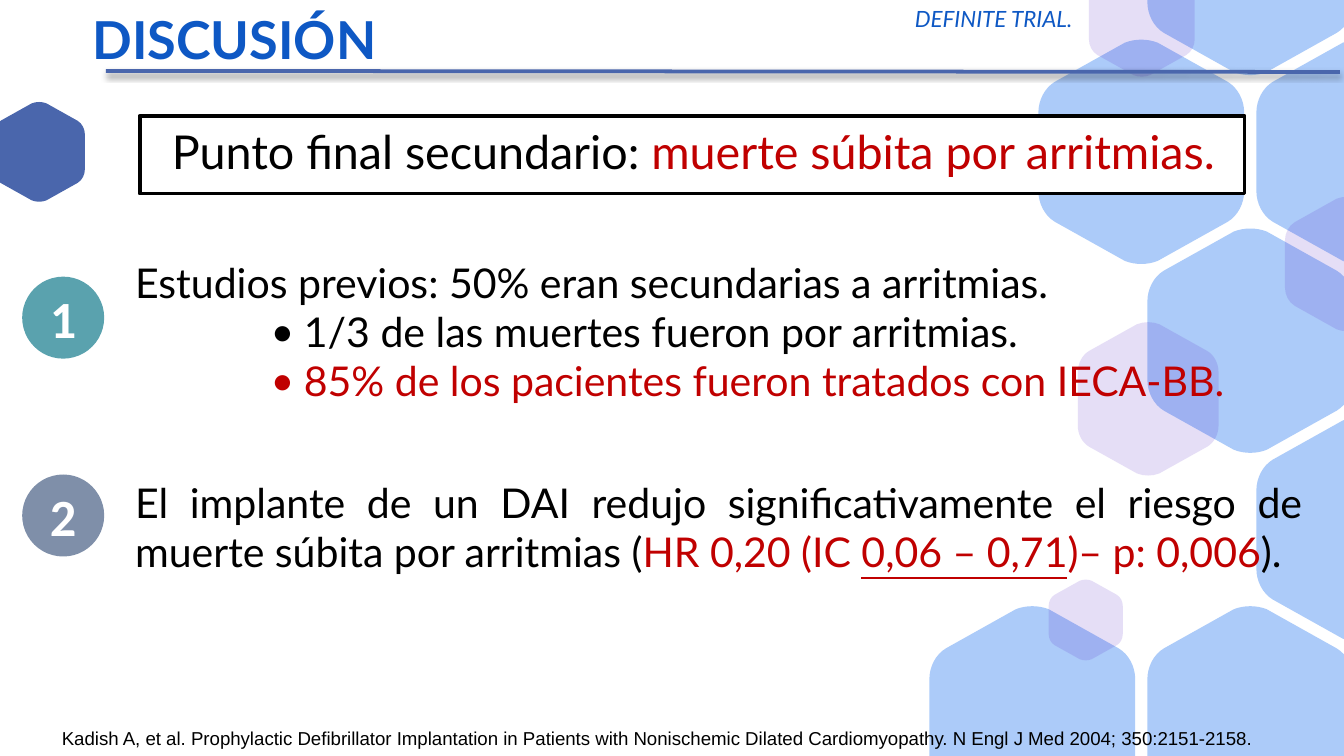
from lxml import etree
from pptx import Presentation
from pptx.dml.color import RGBColor
from pptx.enum.shapes import MSO_CONNECTOR, MSO_SHAPE
from pptx.enum.text import MSO_ANCHOR, MSO_AUTO_SIZE, PP_ALIGN
from pptx.oxml import parse_xml
from pptx.oxml.ns import nsdecls, qn
from pptx.util import Cm, Pt

COLORS = {
    "black": "000000", "white": "FFFFFF", "red": "C00000", "title": "0E58C4",
    "navy": "4A66AC", "sky": "ACCBF9", "violet": "5322C9",
    "teal": "5AA2AE", "slate": "7F8FA9",
}
FORMATS = {
    "trial": {"name": "Lato", "size": Pt(12), "italic": True},
    "heading": {"name": "Lato", "size": Pt(28), "bold": True},
    "endpoint": {"name": "Lato", "size": Pt(25)},
    "point": {"name": "Lato", "size": Pt(22)},
    "number": {"name": "Calibri", "size": Pt(28), "bold": True},
    "source": {"name": "Arial", "size": Pt(10)},
}

# Each paragraph is a list of (text, colour, extra format) runs.
TRIAL = [("DEFINITE TRIAL.", "title", {})]
HEADING = [("DISCUSIÓN", "title", {})]
ENDPOINT = [("Punto final secundario: ", "black", {}),
            ("muerte súbita por arritmias.", "red", {})]
SOURCE = [("Kadish A, et al. Prophylactic Defibrillator Implantation in Patients "
           "with Nonischemic Dilated Cardiomyopathy. N Engl J Med 2004; "
           "350:2151-2158.", "black", {})]
# number, circle colour, circle top, text top, [(is bullet, runs)]
POINTS = [
    ("1", "teal", 5.23, 4.73, [
        (False, [("Estudios previos: 50% eran secundarias a arritmias.", "black", {})]),
        (True, [("1/3 de las muertes fueron por arritmias.", "black", {})]),
        (True, [("85% de los pacientes fueron tratados con IECA-BB.", "red", {})]),
    ]),
    ("2", "slate", 8.97, 8.89, [
        (False, [("El implante de un DAI redujo significativamente el riesgo de "
                  "muerte súbita por arritmias (", "black", {}),
                 ("HR 0,20 (IC ", "red", {}),
                 ("0,06 – 0,71", "red", {"underline": True}),
                 (")– p: 0,006", "red", {}),
                 (").", "black", {})]),
    ]),
]

SLIDE_W, SLIDE_H = 25.4, 14.29
HONEYCOMB = [(0, 3), (2, 3), (3, 0), (2, -1), (2, 1), (1, 0), (3, 2)]  # column, row
COMB_X, COMB_Y, COL_STEP, ROW_STEP, COMB_W = 19.51, 2.87, 2.06, 3.57, 3.89
ACCENTS = [(25.45, 4.99, 2.33), (20.52, 11.72, 1.4),  # centre x, centre y, width
           (21.58, 0.36, 2), (21.7, 7.54, 2.66)]
SIDE_HEXAGON = (0.74, 2.87, 1.73)
# Bézier points of the rounded corners, for a hexagon of width 1
SIDE_CURVE = [(0.5, -0.19), (0.5, -0.25), (0.47, -0.31), (0.42, -0.34)]
TOP_CURVE = [(0.08, -0.53), (0.03, -0.55), (-0.03, -0.55), (-0.08, -0.53)]
HALF_HEXAGON = SIDE_CURVE + TOP_CURVE + [(-x, y) for x, y in reversed(SIDE_CURVE)]


def rgb(color):
    return RGBColor.from_string(COLORS[color])


def paint(sp, fill, line=None):
    sp.shadow.inherit = False
    sp.fill.solid()
    sp.fill.fore_color.rgb = rgb(fill)
    if line:
        sp.line.color.rgb = rgb(line)
        sp.line.width = Pt(2)
    else:
        sp.line.fill.background()


def hexagon_points(cx, cy, w):
    """Corner curves in order; a half beyond the slide becomes a flat edge."""
    def scale(pts, sign):
        return [(cx + sign * x * w, cy + sign * y * w) for x, y in pts]

    reach = 0.55 * w
    if cy + reach > SLIDE_H:
        return scale(HALF_HEXAGON, 1) + [(cx - w / 2, SLIDE_H), (cx + w / 2, SLIDE_H)]
    if cy - reach < 0:
        pts = scale(HALF_HEXAGON, -1)
        return [(x, max(y, 0)) for x, y in pts] + [(cx + w / 2, 0), (cx - w / 2, 0)]
    return scale(HALF_HEXAGON, 1) + scale(HALF_HEXAGON, -1)


def round_corners(sp):
    """Turn each corner's three line segments into one Bézier curve."""
    lines = list(sp._element.iter(qn("a:lnTo")))
    for k in range(0, len(lines) - 2, 4):
        curve = etree.Element(qn("a:cubicBezTo"))
        lines[k].addprevious(curve)
        for line in lines[k:k + 3]:
            curve.append(line[0])
            line.getparent().remove(line)


def add_hexagon(s, cx, cy, w, color, alpha=None):
    pts = [(Cm(x), Cm(y)) for x, y in hexagon_points(cx, cy, w)]
    builder = s.shapes.build_freeform(*pts[0], scale=1.0)
    builder.add_line_segments(pts[1:], close=True)
    sp = builder.convert_to_shape()
    round_corners(sp)
    paint(sp, color)
    if alpha:
        clr = sp._element.spPr.find(".//" + qn("a:srgbClr"))
        etree.SubElement(clr, qn("a:alpha"), val=str(alpha * 1000))
    return sp


def add_backdrop(s):
    """Draw the hexagons and hand them to the slide layout."""
    hexagons = [add_hexagon(s, *SIDE_HEXAGON, "navy")]
    for col, row in HONEYCOMB:
        hexagons.append(add_hexagon(s, COMB_X + col * COL_STEP, COMB_Y + row * ROW_STEP,
                                    COMB_W, "sky"))
    for accent in ACCENTS:
        hexagons.append(add_hexagon(s, *accent, "violet", alpha=15))
    for i, sp in enumerate(hexagons):
        sp._element.nvSpPr.cNvPr.set("id", str(100 + i))
        s.slide_layout.shapes._spTree.append(sp._element)


def place(sp, left, top, width, height):
    box = {"left": left, "top": top, "width": width, "height": height}
    for name, value in box.items():
        setattr(sp, name, Cm(value))


def write(p, runs, style, align=PP_ALIGN.LEFT):
    p.alignment = align
    for text, color, extra in runs:
        r = p.add_run()
        r.text = text
        for name, value in {**FORMATS[style], **extra}.items():
            setattr(r.font, name, value)
        r.font.color.rgb = rgb(color)


def indent(p, margin, bullet=False):
    pPr = p._p.get_or_add_pPr()
    pPr.set("marL", str(Cm(margin)))
    pPr.set("indent", str(Cm(-0.63) if bullet else 0))
    if bullet:
        etree.SubElement(pPr, qn("a:buFont"), typeface="Lato")
        etree.SubElement(pPr, qn("a:buChar"), char="•")
    else:
        etree.SubElement(pPr, qn("a:buNone"))


def add_text(s, box, runs, style, align=PP_ALIGN.LEFT):
    sp = s.shapes.add_textbox(*map(Cm, box))
    sp.text_frame.word_wrap = True
    write(sp.text_frame.paragraphs[0], runs, style, align)


def add_rule(s):
    line = s.shapes.add_connector(MSO_CONNECTOR.STRAIGHT,
                                  Cm(25.32), Cm(1.36), Cm(2), Cm(1.34))
    line.line.color.rgb = rgb("navy")
    line.line.width = Pt(2)
    line._element.spPr.append(parse_xml(
        f'<a:effectLst {nsdecls("a")}><a:outerShdw blurRad="40000" dist="20000" '
        f'dir="5400000" rotWithShape="0"><a:srgbClr val="{COLORS["black"]}">'
        '<a:alpha val="38000"/></a:srgbClr></a:outerShdw></a:effectLst>'))


def add_point(s, body, number, color, circle_top, text_top, paragraphs):
    sp = s.shapes.add_shape(MSO_SHAPE.OVAL, Cm(0.42), Cm(circle_top), Cm(1.55), Cm(1.55))
    paint(sp, color)
    sp.text_frame.vertical_anchor = MSO_ANCHOR.MIDDLE
    write(sp.text_frame.paragraphs[0], [(number, "white", {})], "number", PP_ALIGN.CENTER)

    place(body, 1.95, text_top, 22.92, 1.47)
    tf = body.text_frame
    tf.auto_size = MSO_AUTO_SIZE.NONE
    tf.vertical_anchor = MSO_ANCHOR.TOP
    for i, (bullet, runs) in enumerate(paragraphs):
        p = tf.add_paragraph() if i else tf.paragraphs[0]
        p.space_before = Pt(0)
        indent(p, 3.54 if bullet else 0.35, bullet)
        write(p, runs, "point", PP_ALIGN.JUSTIFY)
    s.shapes._spTree.append(body._element)


def main():
    prs = Presentation()
    prs.slide_width, prs.slide_height = Cm(SLIDE_W), Cm(SLIDE_H)
    s = prs.slides.add_slide(prs.slide_layouts[3])
    title, *bodies = s.placeholders
    add_backdrop(s)

    place(title, -0.3, -0.41, 20.57, 1.57)
    tf = title.text_frame
    for side in ("left", "top", "right", "bottom"):
        setattr(tf, f"margin_{side}", 0)
    tf.auto_size = MSO_AUTO_SIZE.NONE
    tf.vertical_anchor = MSO_ANCHOR.MIDDLE
    tf.paragraphs[0].line_spacing = 0.9
    write(tf.paragraphs[0], TRIAL, "trial", PP_ALIGN.RIGHT)

    add_rule(s)
    add_text(s, (-4.04, 0.02, 16.94, 1.45), HEADING, "heading", PP_ALIGN.CENTER)
    add_text(s, (0.92, 13.61, 23.95, 0.69), SOURCE, "source")

    sp = s.shapes.add_shape(MSO_SHAPE.RECTANGLE, Cm(2.64), Cm(2.19), Cm(20.88), Cm(1.47))
    paint(sp, "white", "black")
    sp.text_frame.vertical_anchor = MSO_ANCHOR.TOP
    indent(sp.text_frame.paragraphs[0], 0.36)
    write(sp.text_frame.paragraphs[0], ENDPOINT, "endpoint")

    for body, point in zip(bodies, POINTS):
        add_point(s, body, *point)
    prs.save("out.pptx")


if __name__ == "__main__":
    main()
